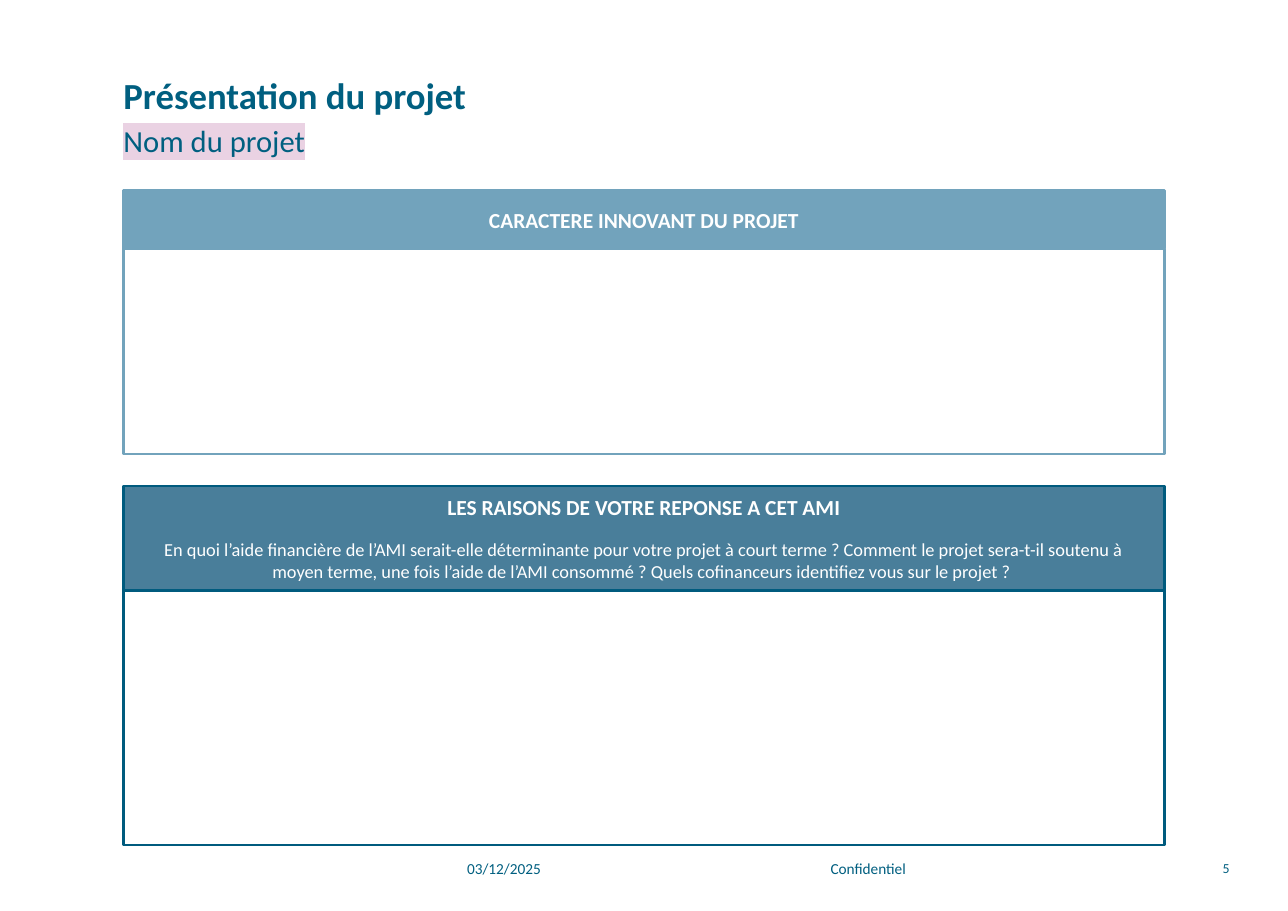
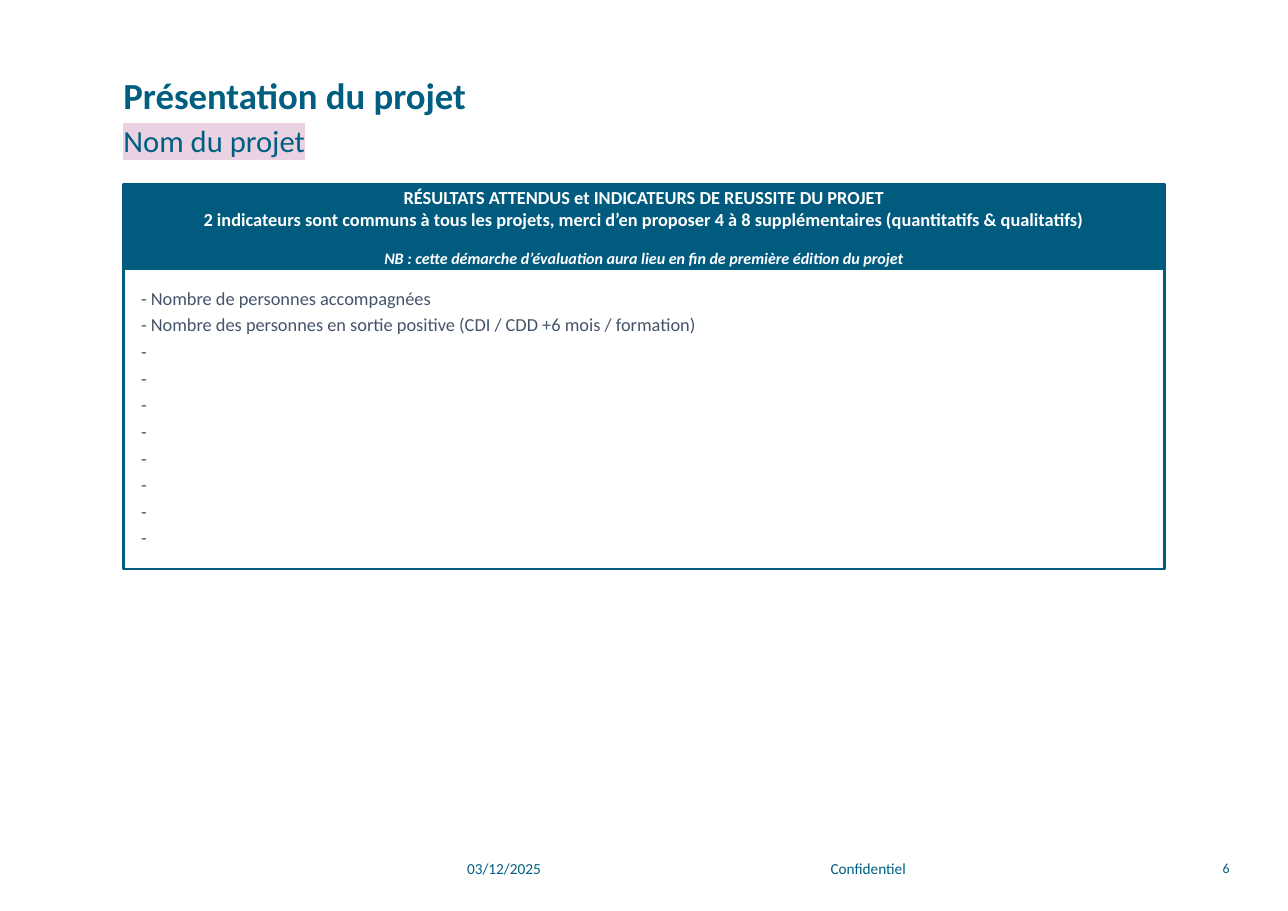
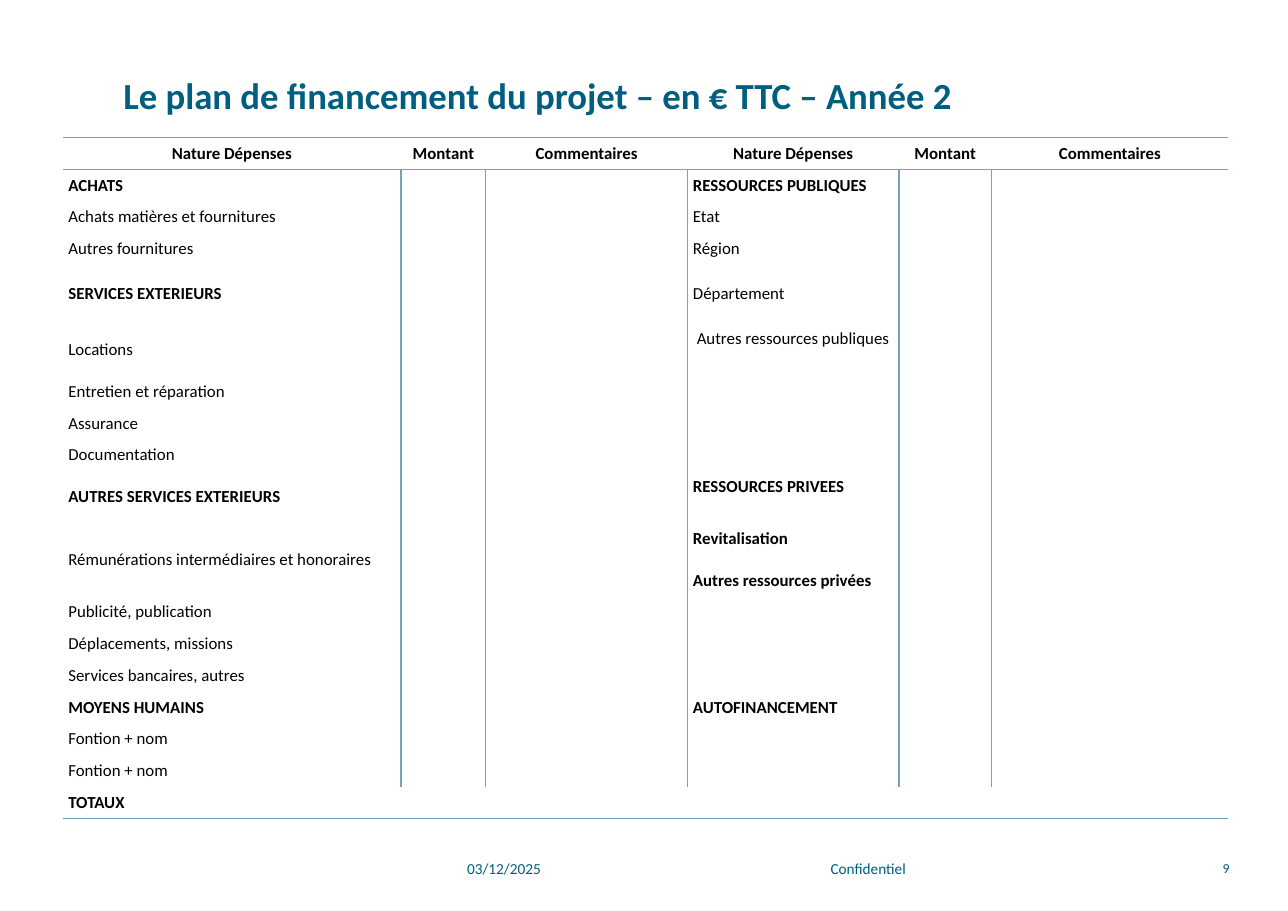
import pptx
import pptx.util
import pptx.dml.color
import pptx.enum.shapes
import pptx.enum.text
import pptx.oxml
import pptx.oxml.ns
import lxml.etree

Pt = pptx.util.Pt
qn = pptx.oxml.ns.qn
ALIGN = pptx.enum.text.PP_ALIGN
ANCHOR = pptx.enum.text.MSO_ANCHOR
RECT = pptx.enum.shapes.MSO_SHAPE.RECTANGLE

FONT = "Calibri"
INK, NAVY, STEEL, SKY = "005F80", "005B7E", "497E9A", "72A3BC"
SLATE, PINK, WHITE, BLACK = "44546A", "EAD2E3", "FFFFFF", "000000"
LEFT, WIDTH, PANEL_W, INSET = 80.64, 722.88, 680.4, 11.52
DATE, NOTICE = "03/12/2025", "Confidentiel"
SUBTITLE = "Nom du projet"

BOLD = {"bold": True}
SLIDES = [
    {"title": "Présentation du projet", "number": "5", "panels": [
        {"top": 124.56, "heights": (37.8, 134.64), "fill": SKY, "line": SKY,
         "head": [("CARACTERE INNOVANT DU PROJET", 14, BOLD)], "body": []},
        {"top": 317.52, "heights": (68.4, 166.32), "fill": STEEL, "line": NAVY,
         "head": [("LES RAISONS DE VOTRE REPONSE A CET AMI", 14, BOLD),
                  ("En quoi l’aide financière de l’AMI serait-elle déterminante pour votre projet "
                   "à court terme ? Comment le projet sera-t-il soutenu à moyen terme, une fois "
                   "l’aide de l’AMI consommé ? Quels cofinanceurs identifiez vous sur le projet ? ",
                   12, {})],
         "body": []}]},
    {"title": "Présentation du projet", "number": "6", "panels": [
        {"top": 120.24, "heights": (55.8, 195.84), "fill": NAVY, "line": NAVY,
         "head": [("RÉSULTATS ATTENDUS et INDICATEURS DE REUSSITE DU PROJET\n"
                   "2 indicateurs sont communs à tous les projets, merci d’en proposer 4 à 8 "
                   "supplémentaires (quantitatifs & qualitatifs)", 12, BOLD),
                  ("NB : cette démarche d’évaluation aura lieu en fin de première édition du projet",
                   10.5, {"bold": True, "italic": True})],
         "body": ["- Nombre de personnes accompagnées",
                  "- Nombre des personnes en sortie positive (CDI / CDD +6 mois / formation)"]
                 + ["-"] * 8}]},
    {"title": "Le plan de financement du projet – en € TTC – Année 2", "number": "9"},
]

HEADINGS = ["Nature Dépenses", "Montant", "Commentaires"] * 2
BUDGET = [
    ("ACHATS", "RESSOURCES PUBLIQUES"),
    ("Achats matières et fournitures", "Etat"),
    ("Autres fournitures", "Région"),
    ("SERVICES EXTERIEURS", "Département"),
    ("Locations", " Autres ressources publiques"),
    ("Entretien et réparation", ""),
    ("Assurance", ""),
    ("Documentation", ""),
    ("AUTRES SERVICES EXTERIEURS", "RESSOURCES PRIVEES"),
    ("Rémunérations intermédiaires et honoraires", "Revitalisation\nAutres ressources privées"),
    ("Publicité, publication", ""),
    ("Déplacements, missions", ""),
    ("Services bancaires, autres", ""),
    ("MOYENS HUMAINS", "AUTOFINANCEMENT"),
    ("Fontion + nom", ""),
    ("Fontion + nom", ""),
    ("TOTAUX", ""),
]
BOLD_ENTRIES = {"Revitalisation", "Autres ressources privées"}
TOP_CELLS = {(5, 3), (9, 3)}
COL_W = [221.04, 55.44, 131.76, 138.24, 60.48, 154.8]
ROW_H, TALL_ROWS = 20.8, {4: 38.2, 5: 34.2, 9: 34.2, 10: 47.6}
CELL_INSET, CELL_SIZE, LINE_H = 3.6, 11, 13.4
PLAIN_TABLE = "{2D5ABB26-0587-4C30-8999-92F81FD0307C}"


def rgb(color):
    return pptx.dml.color.RGBColor.from_string(color)


def style(p, size, color, align=ALIGN.LEFT, bold=False, italic=False):
    p.alignment = align
    f = p.font
    f.name, f.size, f.bold, f.italic = FONT, Pt(size), bold, italic
    f.color.rgb = rgb(color)


def set_frame(tf, inset, anchor):
    tf.word_wrap = True
    tf.margin_left = tf.margin_right = tf.margin_top = tf.margin_bottom = Pt(inset)
    tf.vertical_anchor = anchor


def paragraphs(tf, texts):
    for i, text in enumerate(texts):
        p = tf.add_paragraph() if i else tf.paragraphs[0]
        p.text = text
        yield p


def add_text(s, box, text, size, anchor=ANCHOR.MIDDLE, align=ALIGN.LEFT, bold=False):
    tf = s.shapes.add_textbox(*map(Pt, box)).text_frame
    set_frame(tf, 0, anchor)
    p = tf.paragraphs[0]
    p.text = text
    style(p, size, INK, align, bold)
    return p


def add_frame(s, title, number):
    p = add_text(s, (LEFT, 39.6, WIDTH, 37.44), title, 24, ANCHOR.BOTTOM, bold=True)
    p.line_spacing = 0.9
    add_text(s, (305.28, 551.52, 141.12, 31.68), DATE, 10)
    add_text(s, (470.16, 551.52, 194.4, 31.68), NOTICE, 10, align=ALIGN.CENTER)
    add_text(s, (687.6, 551.52, 115.92, 31.68), number, 9, align=ALIGN.RIGHT)


def add_subtitle(s):
    p = add_text(s, (LEFT, 82.08, WIDTH, 37.44), SUBTITLE, 20, ANCHOR.TOP)
    p.line_spacing = 0.9
    rPr = p.runs[0].font._element if hasattr(p.runs[0].font, "_element") else p.runs[0]._r.get_or_add_rPr()
    highlight = lxml.etree.SubElement(rPr, qn("a:highlight"))
    lxml.etree.SubElement(highlight, qn("a:srgbClr")).set("val", PINK)


def add_rect(group, top, height, line, anchor, fill=None):
    sp = group.shapes.add_shape(RECT, Pt(LEFT), Pt(top), Pt(PANEL_W), Pt(height))
    sp.shadow.inherit = False
    if fill:
        sp.fill.solid()
        sp.fill.fore_color.rgb = rgb(fill)
    else:
        sp.fill.background()
    sp.line.color.rgb = rgb(line)
    sp.line.width = Pt(1.5)
    set_frame(sp.text_frame, INSET, anchor)
    return sp.text_frame


def add_panel(s, panel):
    group = s.shapes.add_group_shape()
    top, (head_h, body_h) = panel["top"], panel["heights"]
    body = add_rect(group, top + head_h, body_h, panel["line"], ANCHOR.TOP)
    for p in paragraphs(body, panel["body"]):
        style(p, 12, SLATE, ALIGN.JUSTIFY)
        p.space_after = Pt(3)
    head = add_rect(group, top, head_h, panel["line"], ANCHOR.MIDDLE, panel["fill"])
    texts = [text for text, _, _ in panel["head"]]
    for p, (_, size, weight) in zip(paragraphs(head, texts), panel["head"]):
        style(p, size, WHITE, ALIGN.CENTER, **weight)
        p.space_after = Pt(12)


def set_borders(cell, sides):
    tcPr = cell._tc.get_or_add_tcPr()
    for i, side in enumerate("LRTB"):
        ln = lxml.etree.Element(qn("a:ln" + side), w=str(Pt(1)))
        if side in sides:
            fill = lxml.etree.SubElement(ln, qn("a:solidFill"))
            lxml.etree.SubElement(fill, qn("a:srgbClr")).set("val", SKY)
        else:
            lxml.etree.SubElement(ln, qn("a:noFill"))
        tcPr.insert(i, ln)


def border_sides(row, col):
    if row == 0:
        return "TB"
    if row == len(BUDGET):
        return "B"
    return ("L" if col else "") + ("R" if col < len(COL_W) - 1 else "") + ("T" if row == 1 else "")


def fill_cell(cell, row, col, text):
    cell.fill.background()
    cell.margin_left = cell.margin_right = Pt(CELL_INSET)
    cell.margin_top = cell.margin_bottom = Pt(CELL_INSET)
    cell.vertical_anchor = ANCHOR.TOP if (row, col) in TOP_CELLS else ANCHOR.MIDDLE
    for i, p in enumerate(paragraphs(cell.text_frame, text.split("\n"))):
        bold = row == 0 or p.text.isupper() or p.text in BOLD_ENTRIES
        style(p, CELL_SIZE, BLACK, ALIGN.LEFT if row else ALIGN.CENTER, bold)
        if i:
            p.space_before = Pt(LINE_H)
        if not p.text:
            end = lxml.etree.SubElement(p._p, qn("a:endParaRPr"))
            end.set("sz", str(CELL_SIZE * 100))
    set_borders(cell, border_sides(row, col))


def add_budget(s):
    rows = [HEADINGS] + [[cost, "", "", source, "", ""] for cost, source in BUDGET]
    heights = [TALL_ROWS.get(i, ROW_H) for i in range(len(rows))]
    table = s.shapes.add_table(len(rows), len(COL_W), Pt(41.04), Pt(90),
                               Pt(sum(COL_W)), Pt(sum(heights))).table
    table.first_row = table.horz_banding = False
    table._tbl.tblPr.find(qn("a:tableStyleId")).text = PLAIN_TABLE
    for column, width in zip(table.columns, COL_W):
        column.width = Pt(width)
    for i, (texts, height) in enumerate(zip(rows, heights)):
        table.rows[i].height = Pt(height)
        for j, text in enumerate(texts):
            fill_cell(table.cell(i, j), i, j, text)


def main():
    prs = pptx.Presentation()
    prs.slide_width, prs.slide_height = Pt(841.68), Pt(595.44)
    for content in SLIDES:
        s = prs.slides.add_slide(prs.slide_layouts[6])
        add_frame(s, content["title"], content["number"])
        if "panels" in content:
            add_subtitle(s)
            for panel in content["panels"]:
                add_panel(s, panel)
        else:
            add_budget(s)
    prs.save("out.pptx")


if __name__ == "__main__":
    main()
